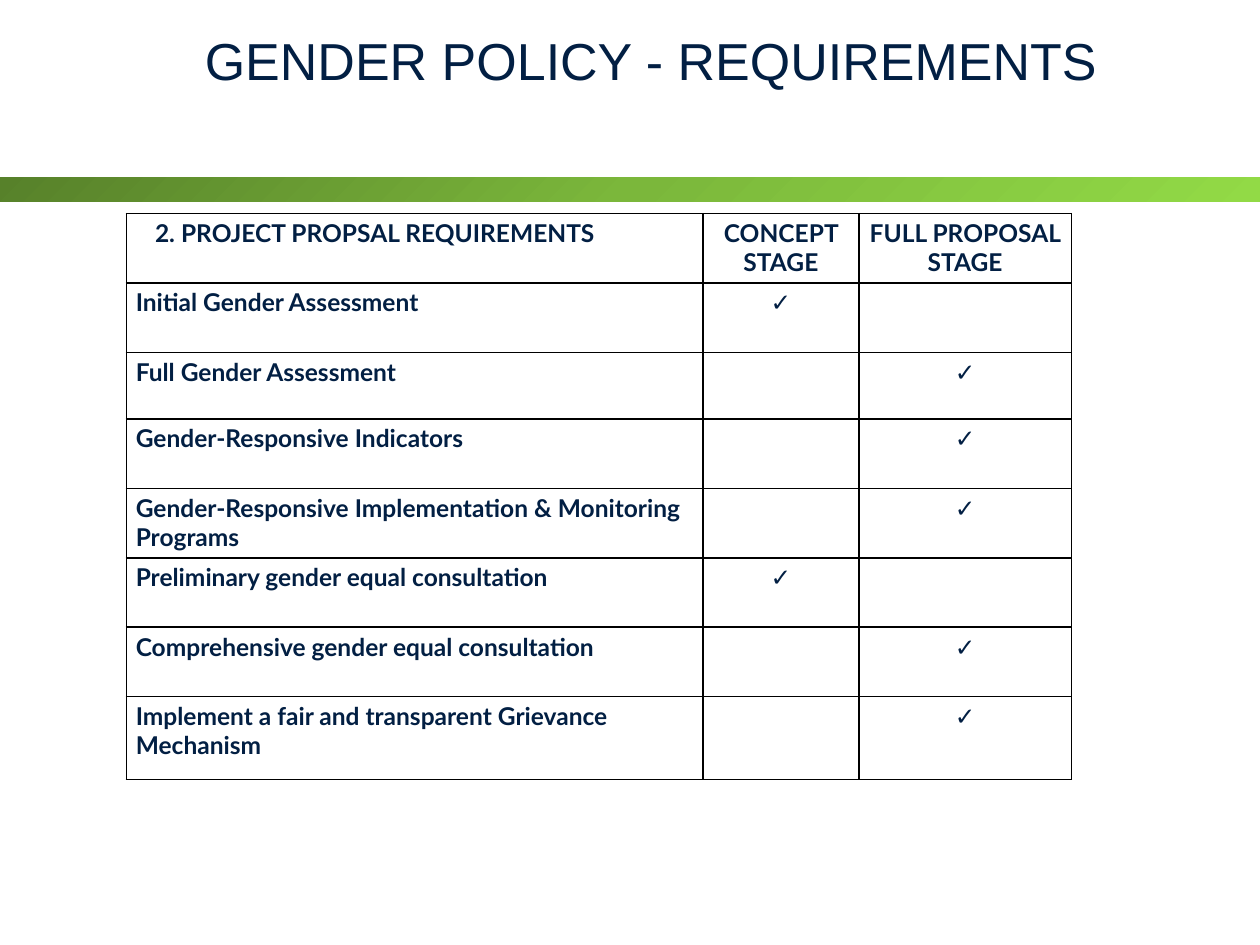
from copy import deepcopy

from lxml.etree import SubElement
from pptx import Presentation
from pptx.dml.color import RGBColor
from pptx.enum.shapes import MSO_SHAPE
from pptx.enum.text import MSO_ANCHOR, PP_ALIGN
from pptx.oxml.ns import qn
from pptx.util import Pt

COLORS = {
    "text": "021F43",
    "border": "000000",
    "band_dark": "57812A",
    "band_mid": "7BB73B",
    "band_light": "92DA46",
}
CHECK = "✓"
HEADERS = ["2. PROJECT PROPSAL REQUIREMENTS", "CONCEPT STAGE", "FULL PROPOSAL STAGE"]
# Each requirement with the column of the stage that asks for it
CONCEPT, FULL = 1, 2
REQUIREMENTS = [
    ("Initial Gender Assessment", CONCEPT),
    ("Full Gender Assessment", FULL),
    ("Gender-Responsive Indicators", FULL),
    ("Gender-Responsive Implementation & Monitoring Programs", FULL),
    ("Preliminary gender equal consultation", CONCEPT),
    ("Comprehensive gender equal consultation", FULL),
    ("Implement a fair and transparent Grievance Mechanism", FULL),
]
COL_WIDTHS = [329.6, 89, 121.5]
ROW_HEIGHTS = [39.7, 39.7, 38, 39.7, 39.7, 39.7, 39.7, 47.2]


def rgb(name):
    return RGBColor.from_string(COLORS[name])


def style(p, font, size, align, bold=False):
    p.alignment = align
    p.font.name = font
    p.font.size = Pt(size)
    p.font.bold = bold
    p.font.color.rgb = rgb("text")


def add_band(s):
    sp = s.shapes.add_shape(MSO_SHAPE.RECTANGLE, 0, Pt(101.4), Pt(720), Pt(13.8))
    sp.shadow.inherit = False
    sp.line.fill.background()
    sp.fill.gradient()
    sp.fill.gradient_angle = 315
    # The default gradient has two stops; add the middle one
    stops = sp._element.spPr.find(qn("a:gradFill")).find(qn("a:gsLst"))
    stops.append(deepcopy(stops[0]))
    names = ["band_dark", "band_mid", "band_light"]
    for i, (stop, name) in enumerate(zip(sp.fill.gradient_stops, names)):
        stop.position = i / 2
        stop.color.rgb = rgb(name)


def add_title(s, text):
    tf = s.shapes.add_textbox(Pt(40.3), Pt(13), Pt(663.8), Pt(41.8)).text_frame
    tf.word_wrap = True
    tf.vertical_anchor = MSO_ANCHOR.MIDDLE
    tf.margin_left = tf.margin_right = Pt(5)
    tf.margin_top = tf.margin_bottom = Pt(2.9)
    p = tf.paragraphs[0]
    p.text = text
    style(p, "Arial", 29.7, PP_ALIGN.CENTER)


def set_borders(cell):
    # Borders come before the fill in the cell properties
    tcPr = cell._tc.get_or_add_tcPr()
    for side in ("lnL", "lnR", "lnT", "lnB"):
        ln = SubElement(tcPr, qn(f"a:{side}"), w=str(Pt(1)))
        fill = SubElement(ln, qn("a:solidFill"))
        SubElement(fill, qn("a:srgbClr"), val=COLORS["border"])


def fill_cell(cell, text, align):
    set_borders(cell)
    cell.fill.background()
    cell.margin_left = cell.margin_right = Pt(5.4)
    cell.margin_top = cell.margin_bottom = Pt(2.7)
    p = cell.text_frame.paragraphs[0]
    p.text = text
    style(p, "Lato", 14, align, bold=True)


def add_requirements_table(s):
    rows = [HEADERS] + [
        [name] + [CHECK if col == stage else "" for col in (CONCEPT, FULL)]
        for name, stage in REQUIREMENTS
    ]
    table = s.shapes.add_table(
        len(rows), len(HEADERS), Pt(72.2), Pt(122),
        Pt(sum(COL_WIDTHS)), Pt(sum(ROW_HEIGHTS)),
    ).table
    table.first_row = table.horz_banding = False
    for column, width in zip(table.columns, COL_WIDTHS):
        column.width = Pt(width)
    for row, height, texts in zip(table.rows, ROW_HEIGHTS, rows):
        row.height = Pt(height)
        for i, (cell, text) in enumerate(zip(row.cells, texts)):
            fill_cell(cell, text, PP_ALIGN.CENTER if i else PP_ALIGN.LEFT)
    # The numbered heading is indented
    p = table.cell(0, 0).text_frame.paragraphs[0]
    p._p.get_or_add_pPr().set("marL", str(Pt(11)))


def main():
    prs = Presentation()
    prs.slide_width, prs.slide_height = Pt(720), Pt(540)
    s = prs.slides.add_slide(prs.slide_layouts[6])
    add_band(s)
    add_requirements_table(s)
    add_title(s, "GENDER POLICY - REQUIREMENTS")
    prs.save("out.pptx")


if __name__ == "__main__":
    main()
